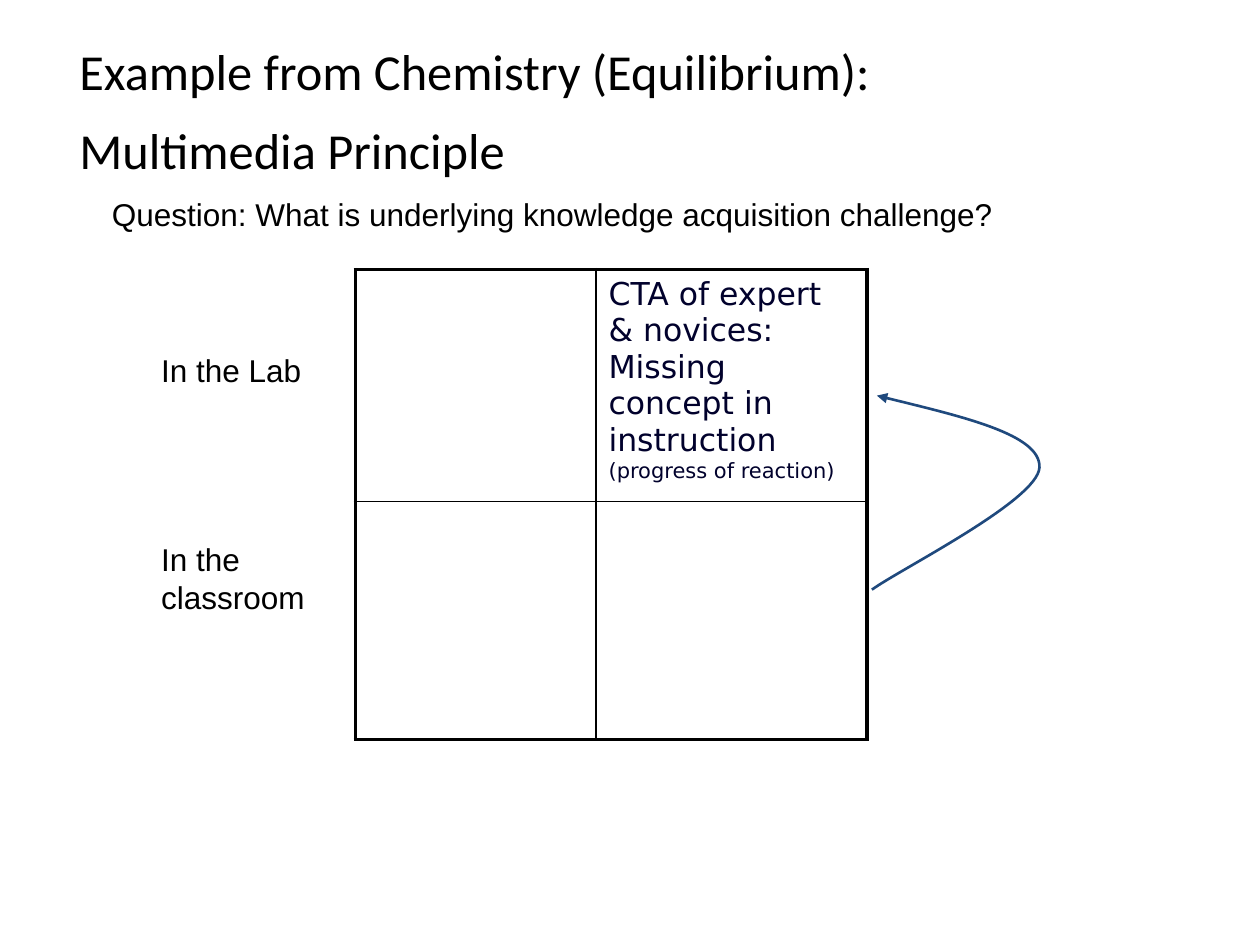
from lxml import etree
from pptx import Presentation
from pptx.dml.color import RGBColor
from pptx.enum.text import MSO_ANCHOR, MSO_AUTO_SIZE, PP_ALIGN
from pptx.oxml.ns import qn
from pptx.util import Inches, Pt

LEFT = PP_ALIGN.LEFT
MIDDLE = MSO_ANCHOR.MIDDLE
NO_FIT = MSO_AUTO_SIZE.NONE

COLORS = {"ink": "000000", "finding": "01012C", "arrow": "1F497D"}
COLUMNS, ROWS = 100, 75  # grid laid over the slide
OUTER, INNER = 2.25, 1  # table rules, points


class Deck:
    """Holds the style and the current slide; lengths are grid units."""

    def __init__(self):
        self.prs = Presentation()
        self.prs.slide_width, self.prs.slide_height = Inches(10), Inches(7.5)
        self.slide = self.prs.slides.add_slide(self.prs.slide_layouts[5])

    def x(self, columns):
        return round(self.prs.slide_width * columns / COLUMNS)

    def y(self, rows):
        return round(self.prs.slide_height * rows / ROWS)

    def box(self, left, top, width, height):
        return self.x(left), self.y(top), self.x(width), self.y(height)

    def run(self, paragraph, text, size, font, color="ink"):
        run = paragraph.add_run()
        run.text = text
        values = {"size": Pt(size), "name": font, "bold": False}
        for name, value in values.items():
            setattr(run.font, name, value)
        run.font.color.rgb = RGBColor.from_string(COLORS[color])

    def title(self, place, lines, size, tail_size):
        """The tail size makes the last line taller than the first."""
        title = self.slide.shapes.title
        title.left, title.top, title.width, title.height = self.box(*place)
        frame = title.text_frame
        frame.auto_size, frame.vertical_anchor = NO_FIT, MIDDLE
        paragraph = frame.paragraphs[0]
        paragraph.alignment = LEFT
        for number, line in enumerate(lines):
            if number:
                paragraph.add_line_break()
            self.run(paragraph, line, size, "Calibri")
        self.run(paragraph, " ", tail_size, "Calibri")

    def text(self, place, lines, pitch=None, gap=0):
        frame = self.slide.shapes.add_textbox(*self.box(*place)).text_frame
        frame.word_wrap = True
        for number, line in enumerate(lines):
            paragraph = frame.add_paragraph() if number else frame.paragraphs[0]
            paragraph.space_before = Pt(gap if number else 0)
            if pitch:
                paragraph.line_spacing = Pt(pitch)
            self.run(paragraph, line, 18, "Arial")

    def cell_border(self, cell, widths):
        properties = cell._tc.get_or_add_tcPr()
        for order, (side, width) in enumerate(widths.items()):
            line = etree.Element(qn(f"a:ln{side}"), w=str(Pt(width)))
            fill = etree.SubElement(line, qn("a:solidFill"))
            etree.SubElement(fill, qn("a:srgbClr"), val=COLORS["ink"])
            properties.insert(order, line)

    def table(self, left, top, widths, heights):
        place = self.box(left, top, sum(widths), sum(heights))
        table = self.slide.shapes.add_table(len(heights), len(widths), *place).table
        table.first_row = table.horz_banding = False
        for column, width in zip(table.columns, widths):
            column.width = self.x(width)
        for row, height in zip(table.rows, heights):
            row.height = self.y(height)
        last_row, last_column = len(heights) - 1, len(widths) - 1
        for r in range(len(heights)):
            for c in range(len(widths)):
                cell = table.cell(r, c)
                cell.fill.background()
                edges = {"L": c == 0, "R": c == last_column,
                         "T": r == 0, "B": r == last_row}
                self.cell_border(cell, {side: OUTER if edge else INNER
                                        for side, edge in edges.items()})
        return table

    def curve(self, points, color, width):
        """Bezier curve: a start, then two handles and an end per segment."""
        start, *rest = [(self.x(x), self.y(y)) for x, y in points]
        builder = self.slide.shapes.build_freeform(*start)
        builder.add_line_segments(rest, close=False)
        shape = builder.convert_to_shape()
        shape.shadow.inherit = False
        shape.fill.background()
        shape.line.color.rgb = RGBColor.from_string(COLORS[color])
        shape.line.width = Pt(width)
        etree.SubElement(shape.line._ln, qn("a:headEnd"), type="triangle")
        segments = list(shape._element.iter(qn("a:lnTo")))
        outline = segments[0].getparent()
        for first in range(0, len(segments), 3):
            bezier = etree.SubElement(outline, qn("a:cubicBezTo"))
            for segment in segments[first:first + 3]:
                bezier.append(segment[0])
                outline.remove(segment)


def main():
    deck = Deck()
    deck.title((5.3, 2.6, 91.1, 12.5),
               ["Example from Chemistry (Equilibrium):", "Multimedia Principle"],
               28.8, 39.6)

    matrix = deck.table(28.2, 21.4, widths=[19.1, 21.5], heights=[18.4, 18.9])
    finding = matrix.cell(0, 1).text_frame.paragraphs[0]
    for words, size in [
        ("CTA of expert & novices: Missing concept in instruction ", 18),
        ("(progress of reaction)", 12),
    ]:
        deck.run(finding, words, size, "DejaVu Sans", "finding")

    deck.text((11.8, 27.4, 17.2, 24.3), ["In the Lab", "In the classroom"],
              pitch=21.6, gap=86.4)
    deck.text((7.9, 15, 80, 4.3),
              ["Question: What is underlying knowledge acquisition challenge?"])
    deck.curve([(69.6, 31.4), (76.1, 33), (82.6, 34.5), (82.5, 37.1),
                (82.4, 39.7), (71.4, 45.2), (69.2, 46.8)], "arrow", 1.5)
    deck.prs.save("out.pptx")


if __name__ == "__main__":
    main()
